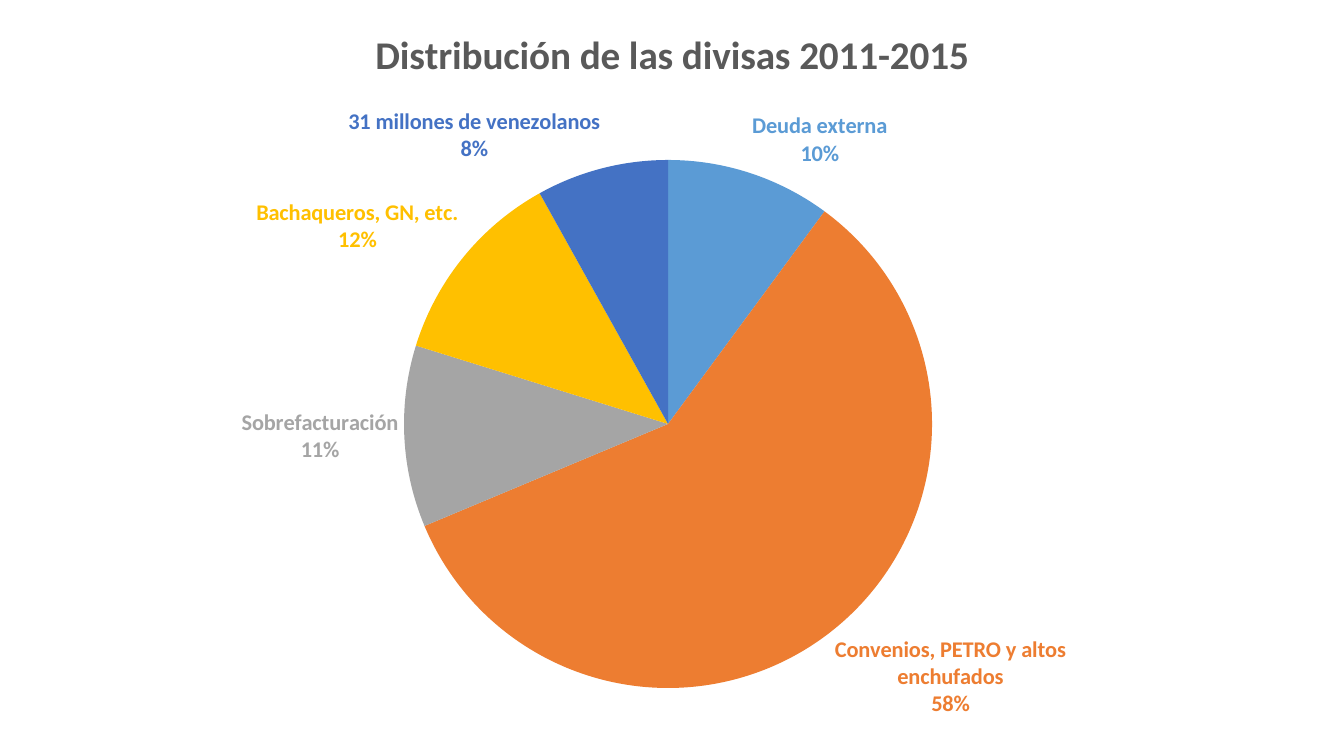
"""Build a slide with a pie chart of how foreign currency was shared out."""
import pptx
import pptx.chart.data
import pptx.dml.color
import pptx.enum.chart
import pptx.oxml
import pptx.oxml.ns
import pptx.util

Pt = pptx.util.Pt
RGB = pptx.dml.color.RGBColor
GREY = RGB(0x59, 0x59, 0x59)

TITLE = "Distribución de las divisas 2011-2015"
SLICES = [
    ("Deuda externa", 10, RGB(0x5B, 0x9B, 0xD5)),
    ("Convenios, PETRO y altos enchufados", 58, RGB(0xED, 0x7D, 0x31)),
    ("Sobrefacturación", 11, RGB(0xA5, 0xA5, 0xA5)),
    ("Bachaqueros, GN, etc.", 12, RGB(0xFF, 0xC0, 0x00)),
    ("31 millones de venezolanos", 8, RGB(0x44, 0x72, 0xC4)),
]
WIDE, HIGH = 960, 540
PIE = {"x": 288.6 / WIDE, "y": 114.3 / HIGH, "w": 377.2 / WIDE, "h": 377.2 / HIGH}
HEAD = {"name": "Calibri", "size": Pt(28), "bold": True}
LABEL = {"name": "Calibri", "size": Pt(16), "bold": True}
FORMAT = '0"%"'


def style(font, look, color):
    for key, value in look.items():
        setattr(font, key, value)
    font.color.rgb = color


def child(parent, tag, **attrs):
    node = pptx.oxml.parse_xml(f"<c:{tag} {pptx.oxml.ns.nsdecls('c')}/>")
    for key, value in attrs.items():
        node.set(key, str(value))
    parent.append(node)
    return node


def place(chart):
    area = chart._chartSpace.chart.plotArea
    for old in area.xpath("c:layout"):
        area.remove(old)
    layout = child(area, "layout")
    area.insert(0, layout)
    manual = child(layout, "manualLayout")
    child(manual, "layoutTarget", val="inner")
    for key in "xy":
        child(manual, key + "Mode", val="edge")
    for key, value in PIE.items():
        child(manual, key, val=value)


def paint(series):
    for index, (name, value, color) in enumerate(SLICES):
        point = series.points[index]
        point.format.fill.solid()
        point.format.fill.fore_color.rgb = color
        point.format.line.fill.background()
        style(point.data_label.font, LABEL, color)
        point.data_label.position = pptx.enum.chart.XL_LABEL_POSITION.OUTSIDE_END
    for label in series._element.xpath(".//c:dLbl"):
        label.xpath("c:showCatName")[0].set("val", "1")
        label.insert(1, child(label, "numFmt", formatCode=FORMAT, sourceLinked=0))
        child(label, "separator").text = "\n"


def main():
    deck = pptx.Presentation()
    deck.slide_width, deck.slide_height = Pt(WIDE), Pt(HIGH)
    slide = deck.slides.add_slide(deck.slide_layouts[6])
    data = pptx.chart.data.CategoryChartData(number_format=FORMAT)
    data.categories = [name for name, value, color in SLICES]
    data.add_series("Divisas", [value for name, value, color in SLICES])
    chart = slide.shapes.add_chart(
        pptx.enum.chart.XL_CHART_TYPE.PIE, 0, 0, Pt(WIDE), Pt(HIGH), data).chart
    chart.has_legend = False
    chart.has_title = True
    chart.font.name = "Calibri"
    chart.font.size = Pt(10)
    frame = chart.chart_title.text_frame
    frame.text = TITLE
    style(frame.paragraphs[0].runs[0].font, HEAD, GREY)
    chart.plots[0].vary_by_categories = True
    place(chart)
    paint(chart.plots[0].series[0])
    deck.save("out.pptx")


if __name__ == "__main__":
    main()
